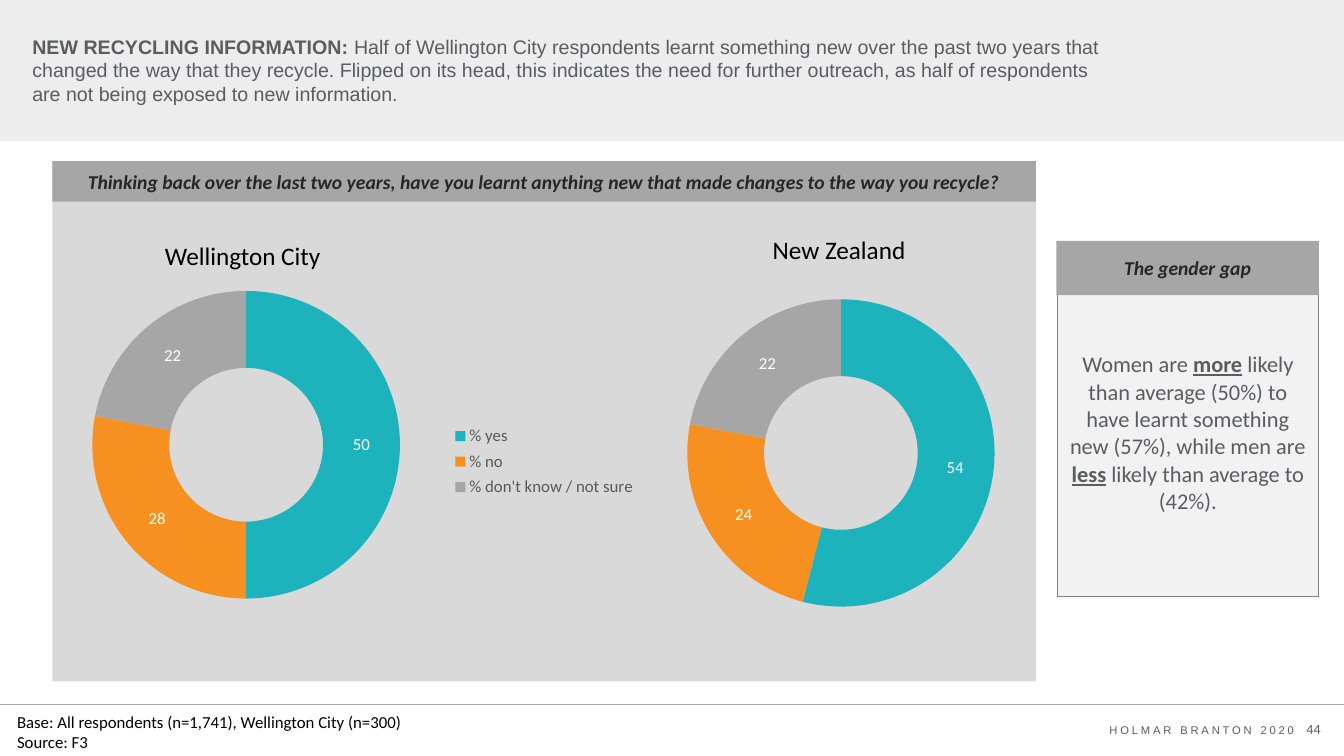
from lxml import etree
from pptx import Presentation
from pptx.chart.data import CategoryChartData
from pptx.dml.color import RGBColor
from pptx.enum.chart import XL_CHART_TYPE as ChartType, XL_LEGEND_POSITION as LegendSide
from pptx.enum.shapes import MSO_CONNECTOR as Connector, MSO_SHAPE as Preset
from pptx.enum.text import MSO_ANCHOR as Anchor, MSO_AUTO_SIZE as AutoSize, PP_ALIGN as Align
from pptx.oxml import parse_xml
from pptx.oxml.ns import nsdecls, qn
from pptx.util import Cm, Pt

BLACK = RGBColor(0x00, 0x00, 0x00)
WHITE = RGBColor(0xFF, 0xFF, 0xFF)
INK = RGBColor(0x26, 0x26, 0x26)
LEGEND_GREY = RGBColor(0x59, 0x59, 0x59)
SLATE = RGBColor(0x5B, 0x5C, 0x60)
BORDER = RGBColor(0x7F, 0x80, 0x85)
MID_GREY = RGBColor(0xA6, 0xA6, 0xA6)
PANEL_GREY = RGBColor(0xD9, 0xD9, 0xD9)
BAND_GREY = RGBColor(0xED, 0xED, 0xED)
PALE_GREY = RGBColor(0xF2, 0xF2, 0xF2)
TEAL = RGBColor(0x1C, 0xB3, 0xBC)
ORANGE = RGBColor(0xF6, 0x90, 0x21)
ANSWER_COLOURS = (TEAL, ORANGE, MID_GREY)

HEADLINE = [
    ("NEW RECYCLING INFORMATION: ", "b"),
    ("Half of Wellington City respondents learnt something new over the past two years that "
     "changed the way that they recycle. Flipped on its head, this indicates the need for "
     "further outreach, as half of respondents are not being exposed to new information.", ""),
]
QUESTION = ("Thinking back over the last two years, have you learnt anything new that made "
            "changes to the way you recycle?")
GENDER_HEADING = "The gender gap"
GENDER_FINDING = [
    ("Women are ", ""), ("more", "bu"),
    (" likely than average (50%) to have learnt something new (57%), while men are ", ""),
    ("less", "bu"), (" likely than average to (42%).", ""),
]
BASE_NOTES = ("Base: All respondents (n=1,741), Wellington City (n=300)", "Source: F3")
FOOTER = "HOLMAR BRANTON 2020"
PAGE = "44"
REGIONS = [
    {"name": "Wellington City", "label_box": (2.79, 5.92, 6.65, 1.02),
     "chart_box": (-0.25, 6.12, 12.78, 10.92), "answers": ("1", "2", "3"),
     "values": (50, 28, 22), "ring": (0.178, 0.111, 0.654, 0.71), "legend": None},
    {"name": "New Zealand", "label_box": (17.88, 5.79, 6.53, 1.02),
     "chart_box": (9.96, 6.12, 16.69, 10.92),
     "answers": ("% yes", "% no", "% don't know / not sure"),
     "values": (54, 24, 22), "ring": (0.441, 0.13, 0.464, 0.71),
     "legend": (0.075, 0.41, 0.3, 0.19)},
]
PANEL = (1.32, 4.06, 24.79, 13.11)


def cm(box):
    return [Cm(length) for length in box]


def write(frame, *paragraphs, size, color=BLACK, font="Calibri", align=Align.LEFT,
          style="", anchor=Anchor.TOP, spacing=None):
    """Fill a frame; a paragraph is a string or a list of (text, style) runs."""
    frame.word_wrap = True
    frame.vertical_anchor = anchor
    for index, content in enumerate(paragraphs):
        paragraph = frame.paragraphs[0] if index == 0 else frame.add_paragraph()
        paragraph.alignment = align
        for text, marks in [(content, style)] if isinstance(content, str) else content:
            run = paragraph.add_run()
            run.text = text
            run.font.name, run.font.size = font, Pt(size)
            run.font.color.rgb = color
            run.font.bold, run.font.italic = "b" in marks, "i" in marks
            run.font.underline = "u" in marks
            if spacing:
                run._r.get_or_add_rPr().set("spc", str(spacing))


def add_text(slide, box, *paragraphs, **style):
    write(slide.shapes.add_textbox(*cm(box)).text_frame, *paragraphs, **style)


def add_bar(slide, box, fill, heading=None):
    bar = slide.shapes.add_shape(Preset.RECTANGLE, *cm(box))
    bar.shadow.inherit = False
    bar.fill.solid()
    bar.fill.fore_color.rgb = fill
    bar.line.fill.background()
    if heading:
        write(bar.text_frame, heading, size=14, color=INK, align=Align.CENTER,
              style="bi", anchor=Anchor.MIDDLE)


def manual_layout(box, inner=""):
    parts = "".join(f'<c:{key} val="{value}"/>' for key, value in zip("xywh", box))
    return parse_xml(f'<c:layout {nsdecls("c")}><c:manualLayout>{inner}<c:xMode val="edge"/>'
                     f'<c:yMode val="edge"/>{parts}</c:manualLayout></c:layout>')


def add_ring(slide, region):
    data = CategoryChartData(number_format="0")
    data.categories = region["answers"]
    data.add_series("Series 1", region["values"])
    chart = slide.shapes.add_chart(ChartType.DOUGHNUT, *cm(region["chart_box"]), data).chart
    chart.has_title = False
    chart.font.name, chart.font.size = "Calibri", Pt(10)
    chart.font.color.rgb = BLACK

    plot = chart.plots[0]
    plot.vary_by_categories = True
    for index, colour in enumerate(ANSWER_COLOURS):
        wedge = plot.series[0].points[index].format
        wedge.fill.solid()
        wedge.fill.fore_color.rgb = colour
        wedge.line.fill.background()
    labels = plot.series[0].data_labels
    labels.show_value = True
    labels.font.name, labels.font.size = "Calibri", Pt(12)
    labels.font.color.rgb = WHITE

    area = chart._chartSpace.chart.plotArea
    for automatic in area.findall(qn("c:layout")):
        area.remove(automatic)
    area.insert(0, manual_layout(region["ring"], '<c:layoutTarget val="inner"/>'))

    chart.has_legend = region["legend"] is not None
    if chart.has_legend:
        legend = chart.legend
        legend.position = LegendSide.LEFT
        legend.include_in_layout = False
        legend.font.name, legend.font.size = "Calibri", Pt(12)
        legend.font.color.rgb = LEGEND_GREY
        for automatic in legend._element.findall(qn("c:layout")):
            legend._element.remove(automatic)
        side = legend._element.find(qn("c:legendPos"))
        side.addnext(manual_layout(region["legend"]))


def add_finding(slide, box):
    table = slide.shapes.add_table(1, 1, *cm(box)).table
    table.first_row = table.horz_banding = False
    cell = table.cell(0, 0)
    properties = cell._tc.get_or_add_tcPr()
    for side in ("lnL", "lnR", "lnT", "lnB"):
        edge = etree.SubElement(properties, qn(f"a:{side}"), w=str(Pt(1)))
        paint = etree.SubElement(edge, qn("a:solidFill"))
        etree.SubElement(paint, qn("a:srgbClr"), val=str(BORDER))
    cell.fill.solid()
    cell.fill.fore_color.rgb = PALE_GREY
    cell.margin_top = Cm(0.82)
    cell.vertical_anchor = Anchor.MIDDLE
    write(cell.text_frame, GENDER_FINDING, size=16, color=SLATE,
          align=Align.CENTER, anchor=None)


def main():
    deck = Presentation()
    deck.slide_width, deck.slide_height = Cm(33.87), Cm(19.05)
    slide = deck.slides.add_slide(deck.slide_layouts[5])

    add_bar(slide, (0, 0, 33.87, 3.56), BAND_GREY)
    rule = slide.shapes.add_connector(Connector.STRAIGHT, *cm((0, 17.75, 33.87, 17.75)))
    rule.line.color.rgb, rule.line.width = MID_GREY, Pt(0.5)
    etree.SubElement(rule._element.spPr, qn("a:effectLst"))
    add_text(slide, (27.18, 17.91, 5.69, 0.99), FOOTER, size=8, color=SLATE, font="Arial",
             align=Align.RIGHT, anchor=Anchor.MIDDLE, spacing=200)
    add_text(slide, (32.36, 18.03, 1.17, 0.69), PAGE, size=10, color=SLATE, align=Align.RIGHT)
    add_bar(slide, PANEL, PANEL_GREY)

    title = slide.shapes.title
    title.left, title.top, title.width, title.height = cm((0.56, 0.38, 27.81, 2.77))
    title.text_frame.auto_size = AutoSize.NONE
    write(title.text_frame, HEADLINE, size=14, color=SLATE, font="Arial", anchor=Anchor.MIDDLE)
    slide.shapes._spTree.append(title._element)

    for region in REGIONS:
        add_ring(slide, region)
        add_text(slide, region["label_box"], region["name"], size=18, align=Align.CENTER)
    add_text(slide, (0.18, 17.81, 11.56, 1.24), *BASE_NOTES, size=12)
    add_bar(slide, (*PANEL[:3], 1.02), MID_GREY, QUESTION)
    add_finding(slide, (26.64, 6.12, 6.59, 8.92))
    add_bar(slide, (26.62, 6.07, 6.62, 1.37), MID_GREY, GENDER_HEADING)
    deck.save("out.pptx")


if __name__ == "__main__":
    main()
